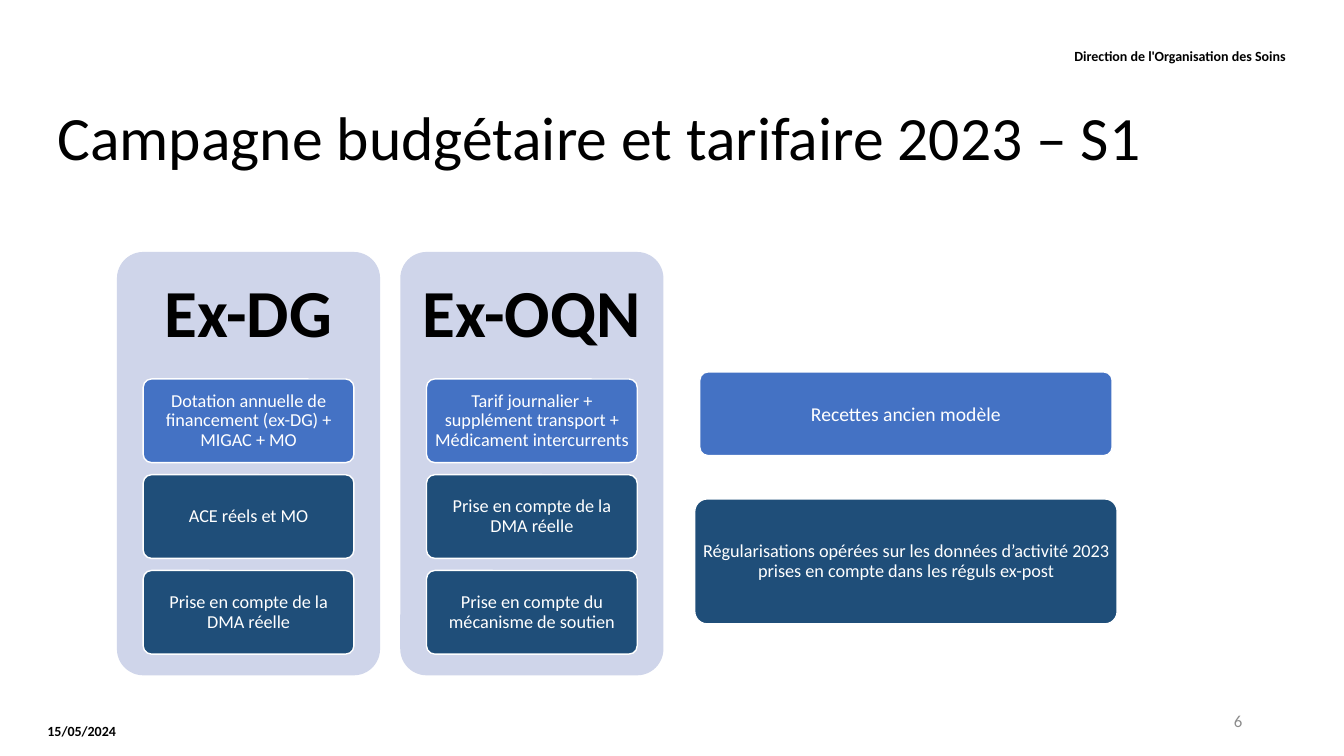
from pptx import Presentation
from pptx.dml.color import RGBColor
from pptx.enum.shapes import MSO_SHAPE
from pptx.enum.text import MSO_ANCHOR, MSO_AUTO_SIZE, PP_ALIGN
from pptx.util import Inches, Pt

ROUND = MSO_SHAPE.ROUNDED_RECTANGLE
MIDDLE = MSO_ANCHOR.MIDDLE
LEFT, CENTER, RIGHT = PP_ALIGN.LEFT, PP_ALIGN.CENTER, PP_ALIGN.RIGHT
BLACK = RGBColor(0x00, 0x00, 0x00)
WHITE = RGBColor(0xFF, 0xFF, 0xFF)
GREY = RGBColor(0x8C, 0x8C, 0x8C)
PALE = RGBColor(0xCF, 0xD5, 0xEA)
BLUE = RGBColor(0x44, 0x72, 0xC4)
NAVY = RGBColor(0x1F, 0x4E, 0x79)


def write(shape, text, size, color, align=CENTER, bold=False, spacing=1.0,
          margins=(0.04, 0.03, 0.04, 0.03)):
    """Fill a shape with one paragraph; margins are left, top, right, bottom in inches."""
    tf = shape.text_frame
    tf.word_wrap = True
    tf.auto_size = MSO_AUTO_SIZE.NONE
    tf.vertical_anchor = MIDDLE
    for side, margin in zip(("left", "top", "right", "bottom"), margins):
        setattr(tf, f"margin_{side}", Inches(margin))
    p = tf.paragraphs[0]
    p.alignment = align
    p.line_spacing = spacing
    r = p.add_run()
    r.text = text
    for name, value in {"name": "Calibri", "size": Pt(size), "bold": bold}.items():
        setattr(r.font, name, value)
    r.font.color.rgb = color


def add_box(left, top, width, height, fill, outlined=True):
    box = s.shapes.add_shape(ROUND, Inches(left), Inches(top), Inches(width), Inches(height))
    box.adjustments[0] = 0.1
    box.shadow.inherit = False
    box.fill.solid()
    box.fill.fore_color.rgb = fill
    if outlined:
        box.line.color.rgb = WHITE
        box.line.width = Pt(1)
    else:
        box.line.fill.background()
    return box


prs = Presentation()
prs.slide_width, prs.slide_height = Inches(13.33), Inches(7.5)
s = prs.slides.add_slide(prs.slide_layouts[5])

# Title
title = s.shapes.title
title.left, title.top = Inches(0.47), Inches(1)
title.width, title.height = Inches(12.28), Inches(0.79)
write(title, "Campagne budgétaire et tarifaire 2023 – S1", 44, BLACK, LEFT,
      spacing=0.9, margins=(0.1, 0.05, 0.1, 0.05))

# Header, date and slide number
for text, (left, top, width, height), size, color, align, bold, margins in [
    ("Direction de l'Organisation des Soins", (4.18, 0.29, 8.57, 0.52),
     10, BLACK, RIGHT, True, (0, 0, 0, 0)),
    ("15/05/2024", (0.47, 7, 1.76, 0.5), 10, BLACK, LEFT, True, (0, 0, 0, 0)),
    ("6", (9.42, 6.95, 3, 0.4), 12, GREY, RIGHT, False, (0.1, 0.05, 0.1, 0.05)),
]:
    label = s.shapes.add_textbox(Inches(left), Inches(top), Inches(width), Inches(height))
    write(label, text, size, color, align, bold, margins=margins)

# Two columns of stacked boxes
columns = [
    ("Ex-DG", ["Dotation annuelle de financement (ex-DG) + MIGAC + MO",
               "ACE réels et MO",
               "Prise en compte de la DMA réelle"]),
    ("Ex-OQN", ["Tarif journalier + supplément transport + Médicament intercurrents",
                "Prise en compte de la DMA réelle",
                "Prise en compte du mécanisme de soutien"]),
]
for col, (heading, items) in enumerate(columns):
    left = 1.16 + 2.81 * col
    panel = add_box(left, 2.5, 2.61, 4.2, PALE, outlined=False)
    # The deep bottom margin keeps the heading above the boxes
    write(panel, heading, 48, BLACK, bold=True, spacing=0.9, margins=(0.12, 0.12, 0.12, 3.06))
    for row, item in enumerate(items):
        box = add_box(left + 0.26, 3.76 + 0.95 * row, 2.09, 0.83, NAVY if row else BLUE)
        write(box, item, 13, WHITE, spacing=0.9)

# Legend
ex_post = add_box(6.89, 4.95, 4.19, 1.24, NAVY)
write(ex_post, "Régularisations opérées sur les données d’activité 2023 "
      "prises en compte dans les réguls ex-post", 13, WHITE, spacing=0.9)
old_model = add_box(6.94, 3.69, 4.09, 0.83, BLUE)
write(old_model, "Recettes ancien modèle", 14, WHITE)

prs.save("out.pptx")
